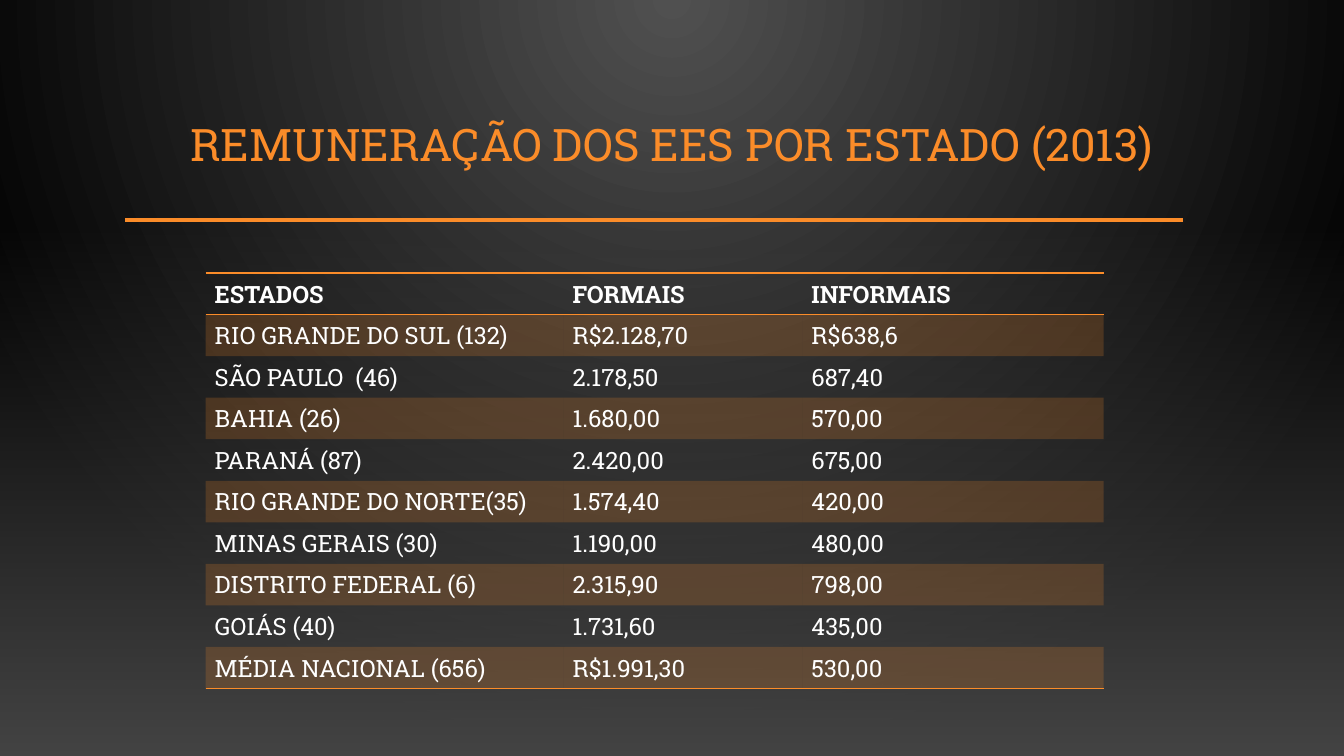
from lxml.etree import SubElement
from pptx import Presentation
from pptx.dml.color import RGBColor
from pptx.enum.shapes import MSO_CONNECTOR, MSO_SHAPE
from pptx.enum.text import MSO_ANCHOR, MSO_AUTO_SIZE, PP_ALIGN
from pptx.oxml.ns import qn
from pptx.util import Cm, Pt

ORANGE = RGBColor(0xFB, 0x8C, 0x29)
WHITE = RGBColor(0xFF, 0xFF, 0xFF)
GLOW = RGBColor(0x50, 0x50, 0x50)
BLACK = RGBColor(0x00, 0x00, 0x00)
FLOOR = RGBColor(0x45, 0x45, 0x45)
FONT = "Roboto Slab"
PLAIN_TABLE = "{2D5ABB26-0587-4C30-8999-92F81FD0307C}"
WIDTH, HEIGHT = 33.87, 19.05

ROWS = [
    ("ESTADOS", "FORMAIS", "INFORMAIS"),
    ("RIO GRANDE DO SUL (132)", "R$2.128,70", "R$638,6"),
    ("SÃO PAULO  (46)", "2.178,50", "687,40"),
    ("BAHIA (26)", "1.680,00", "570,00"),
    ("PARANÁ (87)", "2.420,00", "675,00"),
    ("RIO GRANDE DO NORTE(35)", "1.574,40", "420,00"),
    ("MINAS GERAIS (30)", "1.190,00", "480,00"),
    ("DISTRITO FEDERAL (6)", "2.315,90", "798,00"),
    ("GOIÁS (40)", "1.731,60", "435,00"),
    ("MÉDIA NACIONAL (656)", "R$1.991,30", "530,00"),
]


class Deck:
    """Holds the style and the current slide."""

    def __init__(self):
        self.prs = Presentation()
        self.prs.slide_width, self.prs.slide_height = Cm(WIDTH), Cm(HEIGHT)
        self.s = self.prs.slides.add_slide(self.prs.slide_layouts[5])

    def format(self, p, size, color, bold=False):
        p.font.name, p.font.size = FONT, Pt(size)
        p.font.color.rgb, p.font.bold = color, bold

    def gradient(self, fill, start, end):
        fill.gradient()
        for stop, color in zip(fill.gradient_stops, (start, end)):
            stop.color.rgb = color

    def glow(self, fill, owner):
        self.gradient(fill, GLOW, BLACK)
        grad = next(owner.iter(qn("a:gradFill")))
        grad.remove(grad.find(qn("a:lin")))
        path = SubElement(grad, qn("a:path"), path="circle")
        SubElement(path, qn("a:fillToRect"), l="43000", t="0", r="43000", b="100000")

    def background(self):
        self.glow(self.s.background.fill, self.s._element)

    def panel(self, top):
        sp = self.s.shapes.add_shape(
            MSO_SHAPE.RECTANGLE, 0, Cm(top), Cm(WIDTH), Cm(HEIGHT - top))
        sp.shadow.inherit = False
        sp.line.fill.background()
        return sp

    def glow_panel(self):
        sp = self.panel(0)
        self.glow(sp.fill, sp._element)

    def floor_panel(self, top):
        sp = self.panel(top)
        self.gradient(sp.fill, FLOOR, FLOOR)
        sp.fill.gradient_angle = 270
        first = next(sp._element.iter(qn("a:srgbClr")))
        SubElement(first, qn("a:alpha"), val="0")

    def title(self, text, left, top, width, height):
        sp = self.s.shapes.title
        self.s.shapes._spTree.append(sp._element)
        sp.left, sp.top, sp.width, sp.height = Cm(left), Cm(top), Cm(width), Cm(height)
        tf = sp.text_frame
        tf.text = text
        tf.auto_size = MSO_AUTO_SIZE.NONE
        tf.vertical_anchor = MSO_ANCHOR.MIDDLE
        p = tf.paragraphs[0]
        p.alignment, p.line_spacing = PP_ALIGN.CENTER, 0.9
        self.format(p, 32, ORANGE)

    def rule(self, left, right, y):
        line = self.s.shapes.add_connector(
            MSO_CONNECTOR.STRAIGHT, Cm(left), Cm(y), Cm(right), Cm(y))
        line.line.color.rgb, line.line.width = ORANGE, Pt(2.5)
        SubElement(line._element.spPr, qn("a:effectLst"))

    def border(self, cell, side):
        ln = SubElement(cell._tc.get_or_add_tcPr(), qn(f"a:{side}"), w=str(Pt(1)))
        SubElement(SubElement(ln, qn("a:solidFill")), qn("a:srgbClr"), val=str(ORANGE))

    def cell(self, cell, text, row, last):
        cell.text = text
        cell.margin_left = cell.margin_right = Cm(0.23)
        self.format(cell.text_frame.paragraphs[0], 17, WHITE, bold=row == 0)
        if row == 0:
            self.border(cell, "lnT")
        if row in (0, last):
            self.border(cell, "lnB")
        if row % 2:
            cell.fill.solid()
            cell.fill.fore_color.rgb = ORANGE
            color = cell._tc.tcPr.find(qn("a:solidFill")).find(qn("a:srgbClr"))
            SubElement(color, qn("a:alpha"), val="20000")
        else:
            cell.fill.background()

    def table(self, rows, left, top, widths, row_height):
        table = self.s.shapes.add_table(
            len(rows), len(widths), Cm(left), Cm(top),
            Cm(sum(widths)), Cm(row_height * len(rows))).table
        next(table._tbl.iter(qn("a:tableStyleId"))).text = PLAIN_TABLE
        for column, width in zip(table.columns, widths):
            column.width = Cm(width)
        for i, texts in enumerate(rows):
            table.rows[i].height = Cm(row_height)
            for j, text in enumerate(texts):
                self.cell(table.cell(i, j), text, i, len(rows) - 1)


def main():
    deck = Deck()
    deck.background()
    deck.glow_panel()
    deck.title("REMUNERAÇÃO DOS EES POR ESTADO (2013)", 4.04, 2.24, 25.8, 2.92)
    deck.rule(3.15, 29.82, 5.54)
    deck.floor_panel(5.61)
    deck.table(ROWS, 5.18, 6.88, (9.02, 6.02, 7.59), 1.03)
    deck.prs.save("out.pptx")


if __name__ == "__main__":
    main()
